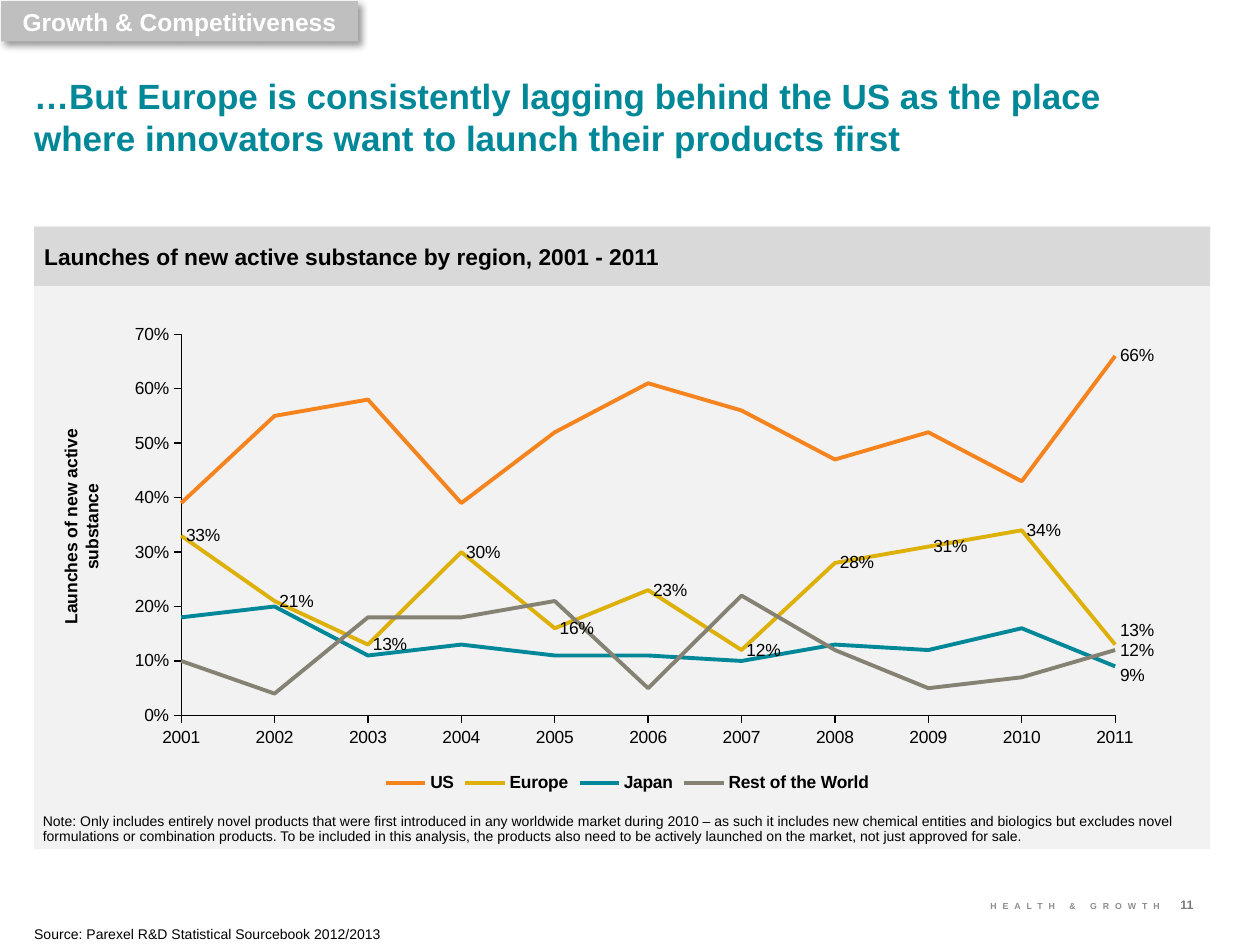
from dataclasses import dataclass
from typing import Optional

import pptx
import pptx.chart.data
import pptx.dml.color
import pptx.enum.chart
import pptx.enum.shapes
import pptx.enum.text
import pptx.oxml
import pptx.oxml.ns
import pptx.util

Pt = pptx.util.Pt
Align = pptx.enum.text.PP_ALIGN
Anchor = pptx.enum.text.MSO_ANCHOR
FONT = "Arial"
BLACK = "000000"
TEAL = "008898"
YEARS = range(2001, 2012)


@dataclass
class Block:
    left: float
    top: float
    width: float
    height: float
    lines: tuple[str, ...] = ()
    size: float = 10
    color: str = BLACK
    bold: bool = False
    fill: Optional[str] = None
    align: Align = Align.LEFT
    anchor: Anchor = Anchor.TOP
    margins: tuple[float, float, float, float] = (0, 0, 0, 0)
    line_spacing: Optional[float] = None
    letter_spacing: float = 0
    rotation: float = 0
    wrap: bool = True
    shadow: bool = False


@dataclass
class Region:
    name: str
    color: str
    percentages: tuple[int, ...]
    label_all: bool = False
    label_shift: float = 0


BLOCKS = (
    Block(19.5, 128.9, 672, 356.4, fill="F2F2F2"),
    Block(19.5, 42.5, 672, 48.2,
          ("…But Europe is consistently lagging behind the US as the place where "
           "innovators want to launch their products first",), 20, TEAL, True),
    Block(442, 514.8, 221, 11.5, ("HEALTH & GROWTH",), 5, "8C8C8C", True,
          align=Align.RIGHT, letter_spacing=3.4),
    Block(674.6, 512.6, 31, 12.2, ("11",), 7, "77787B", True),
    Block(19.5, 129.6, 672, 33.8,
          ("Launches of new active substance by region, 2001 - 2011",), 13, bold=True,
          fill="D9D9D9", anchor=Anchor.MIDDLE, margins=(5.76, 5.76, 5.76, 5.76)),
    Block(0.7, 0.7, 203.8, 23, ("Growth & Competitiveness",), 14, "FFFFFF", True,
          "BFBFBF", Align.CENTER, Anchor.MIDDLE, (7.2, 3.6, 7.2, 3.6), shadow=True),
    Block(19.5, 509.8, 672, 28.8,
          ("Source: Parexel R&D Statistical Sourcebook 2012/2013",), 8,
          anchor=Anchor.BOTTOM, line_spacing=0.9),
    Block(18.7, 468, 672, 14.4,
          ("Note: Only includes entirely novel products that were first introduced in any "
           "worldwide market during 2010 – as such it includes new chemical entities and "
           "biologics but excludes novel formulations or combination products. To be included "
           "in this analysis, the products also need to be actively launched on the market, "
           "not just approved for sale.",), 8,
          anchor=Anchor.BOTTOM, margins=(5.76, 0, 0, 0), line_spacing=0.9),
    Block(-11.5, 288.7, 116, 24.5, ("Launches of new active", "substance"), 10,
          bold=True, align=Align.CENTER, rotation=270, wrap=False),
)

REGIONS = (
    Region("US", "F5841F", (39, 55, 58, 39, 52, 61, 56, 47, 52, 43, 66)),
    Region("Europe", "DDB10A", (33, 21, 13, 30, 16, 23, 12, 28, 31, 34, 13), True, -0.03),
    Region("Japan", TEAL, (18, 20, 11, 13, 11, 11, 10, 13, 12, 16, 9), label_shift=0.02),
    Region("Rest of the World", "858274", (10, 4, 18, 18, 21, 5, 22, 12, 5, 7, 12)),
)


def rgb(color: str) -> pptx.dml.color.RGBColor:
    return pptx.dml.color.RGBColor.from_string(color)


def add_shadow(shape) -> None:
    effects = shape._element.spPr.find(pptx.oxml.ns.qn("a:effectLst"))
    effects.append(pptx.oxml.parse_xml(
        f'<a:outerShdw {pptx.oxml.ns.nsdecls("a")} blurRad="{Pt(4)}" dist="{Pt(3)}" '
        'dir="2700000" algn="tl" rotWithShape="0">'
        '<a:srgbClr val="000000"><a:alpha val="40000"/></a:srgbClr></a:outerShdw>'))


def add_block(slide, block: Block) -> None:
    frame = [Pt(value) for value in (block.left, block.top, block.width, block.height)]
    if block.fill:
        shape = slide.shapes.add_shape(pptx.enum.shapes.MSO_SHAPE.RECTANGLE, *frame)
        shape.fill.solid()
        shape.fill.fore_color.rgb = rgb(block.fill)
        shape.line.fill.background()
        shape.shadow.inherit = False
        if block.shadow:
            add_shadow(shape)
    else:
        shape = slide.shapes.add_textbox(*frame)
    shape.rotation = block.rotation
    text_frame = shape.text_frame
    text_frame.word_wrap = block.wrap
    text_frame.vertical_anchor = block.anchor
    (text_frame.margin_left, text_frame.margin_top,
     text_frame.margin_right, text_frame.margin_bottom) = map(Pt, block.margins)
    for index, line in enumerate(block.lines):
        paragraph = text_frame.add_paragraph() if index else text_frame.paragraphs[0]
        paragraph.alignment = block.align
        if block.line_spacing:
            paragraph.line_spacing = block.line_spacing
        run = paragraph.add_run()
        run.text = line
        run.font.name = FONT
        run.font.size = Pt(block.size)
        run.font.bold = block.bold
        run.font.color.rgb = rgb(block.color)
        if block.letter_spacing:
            run._r.get_or_add_rPr().set("spc", str(round(block.letter_spacing * 100)))


def layout_xml(**settings: object):
    values = "".join(f'<c:{name} val="{value}"/>' for name, value in settings.items())
    return pptx.oxml.parse_xml(
        f'<c:layout {pptx.oxml.ns.nsdecls("c")}>'
        f'<c:manualLayout>{values}</c:manualLayout></c:layout>')


def style_axis(axis) -> None:
    axis.has_major_gridlines = False
    axis.major_tick_mark = pptx.enum.chart.XL_TICK_MARK.OUTSIDE
    axis.minor_tick_mark = pptx.enum.chart.XL_TICK_MARK.NONE
    axis.format.line.color.rgb = rgb(BLACK)
    axis.format.line.width = Pt(0.75)


def style_series(series, region: Region) -> None:
    series.smooth = False
    series.marker.style = pptx.enum.chart.XL_MARKER_STYLE.NONE
    series.format.line.color.rgb = rgb(region.color)
    series.format.line.width = Pt(2.25)
    right = pptx.enum.chart.XL_LABEL_POSITION.RIGHT
    series.data_labels.show_value = region.label_all
    series.data_labels.position = right
    last_index = len(YEARS) - 1
    series.points[last_index].data_label.position = right
    if region.label_shift:
        for label_index in series._element.iter(pptx.oxml.ns.qn("c:dLbl")):
            label_index.insert(1, layout_xml(x=0, y=region.label_shift))


def start_lines_on_axis(chart) -> None:
    value_axis = chart.value_axis._element
    for setting in value_axis.findall(pptx.oxml.ns.qn("c:crossBetween")):
        value_axis.remove(setting)
    anchor = value_axis.find(pptx.oxml.ns.qn("c:crosses"))
    if anchor is None:
        anchor = value_axis.find(pptx.oxml.ns.qn("c:crossAx"))
    anchor.addnext(pptx.oxml.parse_xml(
        f'<c:crossBetween {pptx.oxml.ns.nsdecls("c")} val="midCat"/>'))


def add_launch_chart(slide) -> None:
    data = pptx.chart.data.CategoryChartData(number_format="0%")
    data.categories = [str(year) for year in YEARS]
    for region in REGIONS:
        data.add_series(region.name, [value / 100 for value in region.percentages])
    chart = slide.shapes.add_chart(
        pptx.enum.chart.XL_CHART_TYPE.LINE, Pt(62), Pt(180), Pt(597.6), Pt(275.8), data).chart
    chart.has_title = False
    chart.font.name = FONT
    chart.font.size = Pt(10)
    chart.font.color.rgb = rgb(BLACK)
    chart.has_legend = True
    chart.legend.position = pptx.enum.chart.XL_LEGEND_POSITION.BOTTOM
    chart.legend.include_in_layout = False
    chart.legend.font.bold = True
    chart.legend.font.size = Pt(10)
    for axis in (chart.category_axis, chart.value_axis):
        style_axis(axis)
    chart.value_axis.minimum_scale = 0
    chart.value_axis.maximum_scale = 0.7
    chart.value_axis.major_unit = 0.1
    chart.value_axis.tick_labels.number_format = "0%"
    chart.value_axis.tick_labels.number_format_is_linked = False
    chart.plots[0].vary_by_categories = False
    for series, region in zip(chart.plots[0].series, REGIONS):
        style_series(series, region)
    start_lines_on_axis(chart)
    plot_area = chart.value_axis._element.getparent()
    for layout in plot_area.findall(pptx.oxml.ns.qn("c:layout")):
        plot_area.remove(layout)
    plot_area.insert(0, layout_xml(layoutTarget="inner", xMode="edge", yMode="edge",
                                   x=0.07, y=0.04, w=0.9, h=0.79))


presentation = pptx.Presentation()
presentation.slide_width, presentation.slide_height = Pt(720), Pt(540)
main_slide = presentation.slides.add_slide(presentation.slide_layouts[6])
for slide_block in BLOCKS:
    add_block(main_slide, slide_block)
add_launch_chart(main_slide)
presentation.save("out.pptx")
